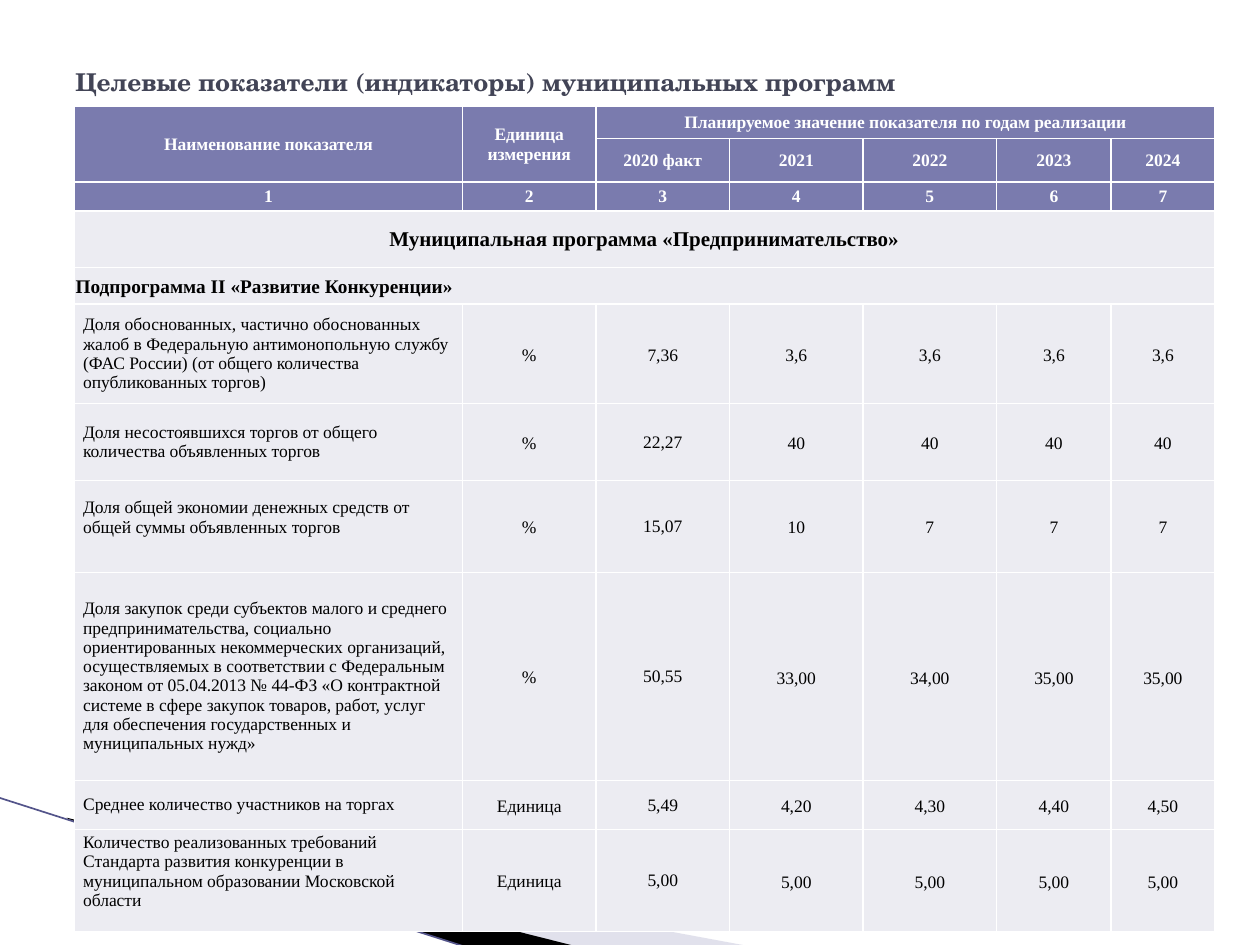
from dataclasses import dataclass

from lxml.etree import SubElement
from pptx import Presentation
from pptx.dml.color import RGBColor
from pptx.enum.shapes import MSO_CONNECTOR
from pptx.enum.text import MSO_ANCHOR, PP_ALIGN
from pptx.oxml.ns import qn
from pptx.util import Inches, Pt

SERIF = "Times New Roman"
WHITE, BLACK = "FFFFFF", "000000"
HEAD, BODY = "7A7BAE", "ECECF2"
TIGHT = (0.01, 0.01, 0.01, 0)
WIDE = (0.07, 0, 0.07, 0)
RAISED = (0.07, 0, 0.07, 0.14)

COLS = [3.08, 1.06, 1.06, 1.06, 1.06, 0.91, 0.82]
ROWS = [0.26, 0.32, 0.23, 0.45, 0.29, 0.79, 0.61, 0.73, 1.65, 0.39, 0.77]


@dataclass
class Style:
    fill: str = BODY
    ink: str = BLACK
    size: int = 10
    bold: bool = False
    align: PP_ALIGN = PP_ALIGN.CENTER
    inset: tuple = TIGHT
    loose: bool = False


@dataclass
class Goal:
    name: str
    unit: str
    fact: str
    plan: list[str]
    inset: tuple = WIDE


@dataclass
class Wedge:
    points: list[tuple[float, float]]
    fill: str
    alpha: int = 100


TOP = Style(HEAD, WHITE, bold=True)
PROGRAM = Style(size=12, bold=True)
PART = Style(size=11, bold=True, align=PP_ALIGN.LEFT)

WEDGES = [
    Wedge([(0.55, 6.51), (5.95, 7.51), (4.56, 7.51), (0.55, 6.5)], "B6B6D1", 40),
    Wedge([(0.53, 6.49), (4.57, 7.51), (3.72, 7.52), (0.54, 6.5)], BLACK),
]

GOALS = [
    Goal("Доля обоснованных, частично обоснованных жалоб в Федеральную "
         "антимонопольную службу (ФАС России) (от общего количества "
         "опубликованных торгов)", "%", "7,36", ["3,6"] * 4),
    Goal("Доля несостоявшихся торгов от общего количества объявленных торгов",
         "%", "22,27", ["40"] * 4),
    Goal("Доля общей экономии денежных средств от общей суммы объявленных торгов",
         "%", "15,07", ["10", "7", "7", "7"], RAISED),
    Goal("Доля закупок среди субъектов малого и среднего предпринимательства, "
         "социально ориентированных некоммерческих организаций, осуществляемых "
         "в соответствии с Федеральным законом от 05.04.2013 № 44-ФЗ "
         "«О контрактной системе в сфере закупок товаров, работ, услуг для "
         "обеспечения государственных и муниципальных нужд»",
         "%", "50,55", ["33,00", "34,00", "35,00", "35,00"]),
    Goal("Среднее количество участников на торгах",
         "Единица", "5,49", ["4,20", "4,30", "4,40", "4,50"]),
    Goal("Количество реализованных требований Стандарта развития конкуренции "
         "в муниципальном образовании Московской области",
         "Единица", "5,00", ["5,00"] * 4, RAISED),
]


def color(code: str) -> RGBColor:
    return RGBColor.from_string(code)


def draw_wedge(slide, wedge: Wedge) -> None:
    points = [(Inches(x), Inches(y)) for x, y in wedge.points]
    pen = slide.shapes.build_freeform(*points[0])
    pen.add_line_segments(points[1:])
    shape = pen.convert_to_shape()
    shape.shadow.inherit = False
    shape.line.fill.background()
    shape.fill.solid()
    shape.fill.fore_color.rgb = color(wedge.fill)
    if wedge.alpha < 100:
        tint = shape.fill._xPr.find(qn("a:solidFill"))[0]
        SubElement(tint, qn("a:alpha"), val=str(wedge.alpha * 1000))


def draw_line(slide) -> None:
    line = slide.shapes.add_connector(
        MSO_CONNECTOR.STRAIGHT,
        Inches(-0.01), Inches(6.33), Inches(3.71), Inches(7.52))
    line.line.color.rgb = color("53548A")
    line.line.width = Pt(0.95)
    SubElement(line._element.spPr, qn("a:effectLst"))


def draw_title(slide) -> None:
    box = slide.shapes.add_textbox(Inches(0.5), Inches(0.3), Inches(9), Inches(0.69))
    frame = box.text_frame
    frame.word_wrap = True
    frame.vertical_anchor = MSO_ANCHOR.MIDDLE
    frame.text = "Целевые показатели (индикаторы) муниципальных программ"
    font = frame.paragraphs[0].runs[0].font
    font.name, font.size, font.bold = "TeX Gyre Schola", Pt(14), True
    font.color.rgb = color("424456")


def add_edges(cell) -> None:
    """Give a cell white borders; call it before the fill is set."""
    props = cell._tc.get_or_add_tcPr()
    for side in ("lnL", "lnR", "lnT", "lnB"):
        edge = SubElement(props, qn(f"a:{side}"), w=str(Pt(1)))
        fill = SubElement(edge, qn("a:solidFill"))
        SubElement(fill, qn("a:srgbClr"), val=WHITE)


def write(cell, text: str, style: Style) -> None:
    left, top, right, bottom = map(Inches, style.inset)
    cell.margin_left, cell.margin_top = left, top
    cell.margin_right, cell.margin_bottom = right, bottom
    cell.vertical_anchor = MSO_ANCHOR.MIDDLE
    cell.fill.solid()
    cell.fill.fore_color.rgb = color(style.fill)
    cell.text_frame.text = text
    para = cell.text_frame.paragraphs[0]
    para.alignment = style.align
    if style.loose:
        para.line_spacing, para.space_after = 1.15, Pt(10)
    font = para.runs[0].font
    font.name, font.size, font.bold = SERIF, Pt(style.size), style.bold
    font.color.rgb = color(style.ink)


def fill_head(table) -> None:
    spans = [(0, 0, 1, 0), (0, 1, 1, 1), (0, 2, 0, 6), (3, 0, 3, 6), (4, 0, 4, 6)]
    for top, left, bottom, right in spans:
        table.cell(top, left).merge(table.cell(bottom, right))
    names = ["Наименование показателя", "Единица измерения",
             "Планируемое значение показателя по годам реализации"]
    for col, name in enumerate(names):
        write(table.cell(0, col), name, TOP)
    for col, year in enumerate(["2020 факт", "2021", "2022", "2023", "2024"], 2):
        write(table.cell(1, col), year, TOP)
    for col in range(len(COLS)):
        write(table.cell(2, col), str(col + 1), TOP)
    write(table.cell(3, 0), "Муниципальная программа «Предпринимательство»", PROGRAM)
    write(table.cell(4, 0), "Подпрограмма II «Развитие Конкуренции»", PART)


def fill_goals(table) -> None:
    loose = Style(inset=WIDE, loose=True)
    for row, goal in enumerate(GOALS, 5):
        label = Style(align=PP_ALIGN.LEFT, inset=goal.inset)
        fact = loose if row == 5 else Style()
        plan = loose if row < 8 else Style(loose=True)
        texts = [goal.name, goal.unit, goal.fact, *goal.plan]
        styles = [label, loose, fact] + [plan] * len(goal.plan)
        for col, (text, style) in enumerate(zip(texts, styles)):
            write(table.cell(row, col), text, style)


def draw_table(slide) -> None:
    table = slide.shapes.add_table(
        len(ROWS), len(COLS), Inches(0.59), Inches(0.84),
        Inches(sum(COLS)), Inches(sum(ROWS))).table
    table.first_row = table.horz_banding = False
    for col, width in zip(table.columns, COLS):
        col.width = Inches(width)
    for row, height in zip(table.rows, ROWS):
        row.height = Inches(height)
    for cell in table.iter_cells():
        add_edges(cell)
        # Small type keeps empty merged cells from stretching their rows
        cell.text_frame.paragraphs[0].font.size = Pt(10)
    fill_head(table)
    fill_goals(table)


def main() -> None:
    deck = Presentation()
    deck.slide_width, deck.slide_height = Inches(10), Inches(7.5)
    slide = deck.slides.add_slide(deck.slide_layouts[6])
    for wedge in WEDGES:
        draw_wedge(slide, wedge)
    draw_line(slide)
    draw_title(slide)
    draw_table(slide)
    deck.save("out.pptx")


if __name__ == "__main__":
    main()
